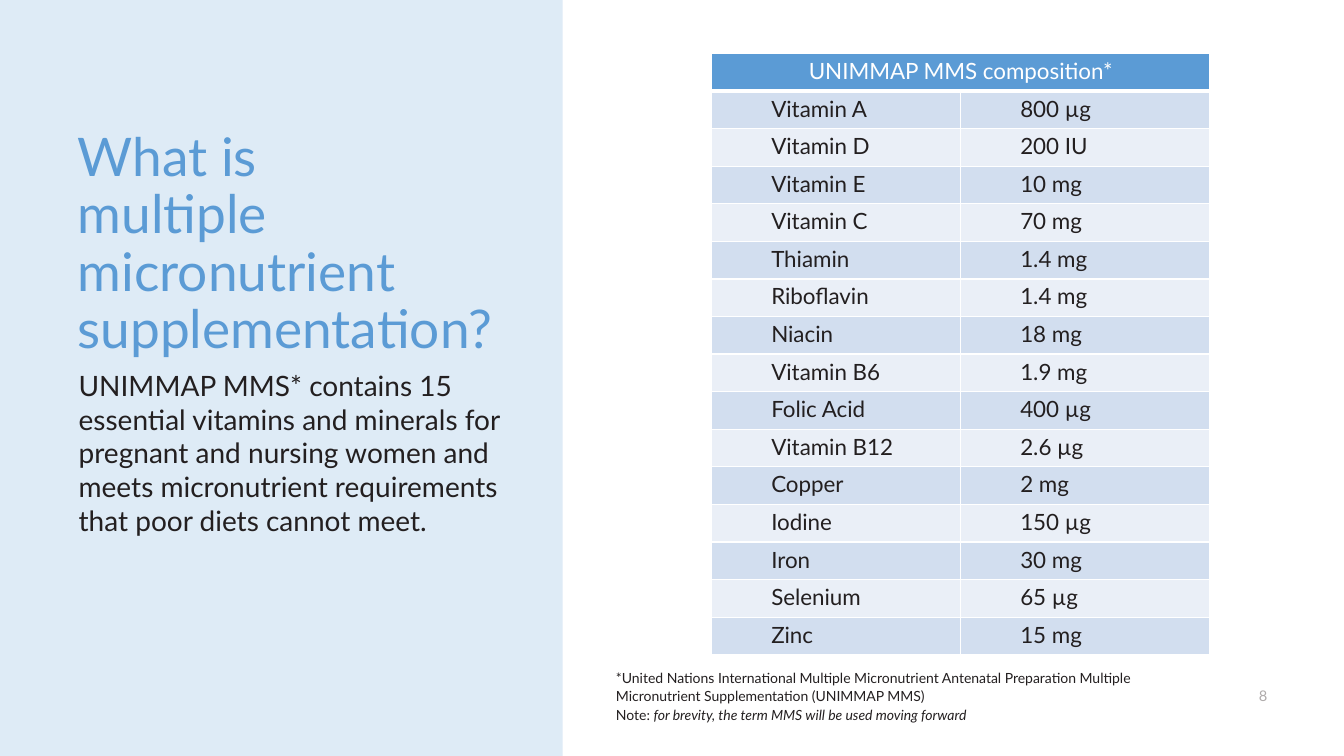
from dataclasses import dataclass

import lxml.etree
import pptx
import pptx.dml.color
import pptx.enum.shapes
import pptx.enum.text
import pptx.oxml
import pptx.oxml.ns
import pptx.util

Inches = pptx.util.Inches
Pt = pptx.util.Pt
qn = pptx.oxml.ns.qn
ALIGN = pptx.enum.text.PP_ALIGN


@dataclass(frozen=True)
class Theme:
    font: str = "Lato"
    blue: str = "5B9BD5"
    ink: str = "231F20"
    white: str = "FFFFFF"
    grey: str = "AFABAB"
    bands: tuple = ("D2DEEF", "EAEFF7")
    title_size: float = 38
    body_size: float = 20
    table_size: float = 16
    number_size: float = 10.5
    note_size: float = 10


COMPOSITION = [
    ("Vitamin A", "800 µg"),
    ("Vitamin D", "200 IU"),
    ("Vitamin E", "10 mg"),
    ("Vitamin C", "70 mg"),
    ("Thiamin", "1.4 mg"),
    ("Riboflavin", "1.4 mg"),
    ("Niacin", "18 mg"),
    ("Vitamin B6", "1.9 mg"),
    ("Folic Acid", "400 µg"),
    ("Vitamin B12", "2.6 µg"),
    ("Copper", "2 mg"),
    ("Iodine", "150 µg"),
    ("Iron", "30 mg"),
    ("Selenium", "65 µg"),
    ("Zinc", "15 mg"),
]


def rgb(color):
    return pptx.dml.color.RGBColor.from_string(color)


def write(paragraph, text, *, size, color, font=Theme.font, italic=False, align=ALIGN.LEFT,
          line_spacing=1.0, before=0, after=0, indent=0):
    """Add text to a paragraph; each newline becomes a line break."""
    paragraph.alignment = align
    paragraph.line_spacing = line_spacing
    paragraph.space_before = Pt(before)
    paragraph.space_after = Pt(after)
    if indent:
        properties = paragraph._p.get_or_add_pPr()
        properties.set("marL", str(Inches(indent)))
        properties.set("indent", "0")
    for index, line in enumerate(text.split("\n")):
        if index:
            paragraph.add_line_break()
        run = paragraph.add_run()
        run.text = line
        run.font.name = font
        run.font.size = Pt(size)
        run.font.bold = False
        run.font.italic = italic
        run.font.color.rgb = rgb(color)


class SlideBuilder:
    def __init__(self, slide, theme):
        self.slide = slide
        self.theme = theme

    def frame(self, shape):
        """Return the shape's text frame without margins, wrapped and centred vertically."""
        frame = shape.text_frame
        frame.margin_left = frame.margin_top = frame.margin_right = frame.margin_bottom = 0
        frame.word_wrap = True
        frame.auto_size = pptx.enum.text.MSO_AUTO_SIZE.NONE
        frame.vertical_anchor = pptx.enum.text.MSO_ANCHOR.MIDDLE
        return frame

    def panel(self, left, top, width, height, color, opacity):
        """Draw a translucent rectangle behind everything else."""
        shape = self.slide.shapes.add_shape(
            pptx.enum.shapes.MSO_SHAPE.RECTANGLE,
            Inches(left), Inches(top), Inches(width), Inches(height))
        shape.shadow.inherit = False
        shape.line.fill.background()
        shape.fill.solid()
        shape.fill.fore_color.rgb = rgb(color)
        fill_color = shape.element.spPr.find(qn("a:solidFill"))[0]
        lxml.etree.SubElement(fill_color, qn("a:alpha")).set("val", str(opacity * 1000))
        shape.element.getparent().insert(2, shape.element)

    def title(self, left, top, width, height):
        shape = self.slide.shapes.title
        shape.left, shape.top = Inches(left), Inches(top)
        shape.width, shape.height = Inches(width), Inches(height)
        return self.frame(shape)

    def text_box(self, left, top, width, height):
        return self.frame(self.slide.shapes.add_textbox(
            Inches(left), Inches(top), Inches(width), Inches(height)))

    def cell(self, cell, text, fill, bottom=1, **text_format):
        properties = cell._tc.get_or_add_tcPr()
        for side, width in (("L", 1), ("R", 1), ("T", 1), ("B", bottom)):
            line = lxml.etree.SubElement(properties, qn(f"a:ln{side}"), w=str(Pt(width)))
            solid = lxml.etree.SubElement(line, qn("a:solidFill"))
            lxml.etree.SubElement(solid, qn("a:srgbClr"), val=self.theme.white)
        cell.fill.solid()
        cell.fill.fore_color.rgb = rgb(fill)
        cell.margin_left = cell.margin_right = Inches(0.09)
        cell.margin_top = cell.margin_bottom = Inches(0.04)
        write(cell.text_frame.paragraphs[0], text, size=self.theme.table_size, **text_format)

    def table(self, left, top, width, height, heading, rows):
        theme = self.theme
        table = self.slide.shapes.add_table(
            len(rows) + 1, 2, Inches(left), Inches(top), Inches(width), Inches(height)).table
        table.cell(0, 0).merge(table.cell(0, 1))
        self.cell(table.cell(0, 0), heading, theme.blue, bottom=3,
                  color=theme.white, align=ALIGN.CENTER)
        for row_index, row in enumerate(rows):
            for column_index, text in enumerate(row):
                self.cell(table.cell(row_index + 1, column_index), text,
                          theme.bands[row_index % 2], color=theme.ink, indent=0.5)


def main():
    theme = Theme()
    presentation = pptx.Presentation()
    presentation.slide_width, presentation.slide_height = Inches(13.33), Inches(7.5)
    builder = SlideBuilder(presentation.slides.add_slide(presentation.slide_layouts[5]), theme)

    builder.panel(0, 0, 5.58, 7.5, theme.blue, opacity=20)

    title = builder.title(0.77, 0.4, 4.39, 5.82)
    write(title.paragraphs[0], "What is\nmultiple\nmicronutrient supplementation?",
          size=theme.title_size, color=theme.blue, line_spacing=0.9)
    write(title.add_paragraph(),
          "UNIMMAP MMS* contains 15 essential vitamins and minerals for pregnant and nursing "
          "women and meets micronutrient requirements that poor diets cannot meet.",
          size=theme.body_size, color=theme.ink, before=6, after=6, indent=0.01)

    builder.table(7.06, 0.53, 4.94, 5.97, "UNIMMAP MMS composition*", COMPOSITION)

    note = builder.text_box(6.11, 6.58, 5.97, 0.64).paragraphs[0]
    note_format = dict(size=theme.note_size, color=theme.ink, line_spacing=1.1, after=6)
    write(note, "*United Nations International Multiple Micronutrient Antenatal Preparation "
                "Multiple Micronutrient Supplementation (UNIMMAP MMS)\nNote: ", **note_format)
    write(note, "for brevity, the term MMS will be used moving forward",
          italic=True, **note_format)

    number = builder.text_box(12.23, 6.7, 0.34, 0.4)
    write(number.paragraphs[0], "8", size=theme.number_size, color=theme.grey, align=ALIGN.RIGHT)

    presentation.save("out.pptx")


if __name__ == "__main__":
    main()
